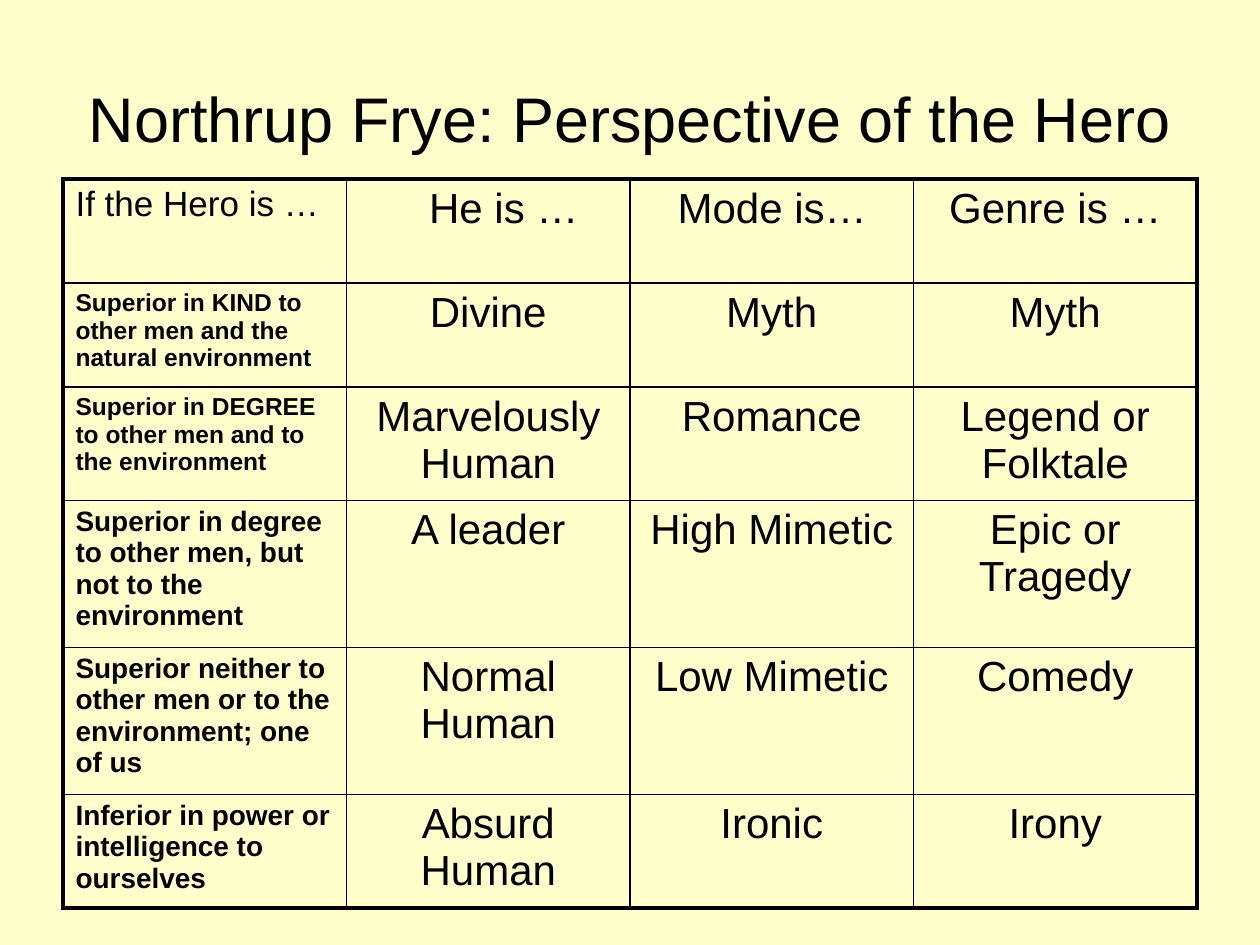
from lxml.etree import SubElement
from pptx import Presentation
from pptx.dml.color import RGBColor
from pptx.enum.text import MSO_ANCHOR, PP_ALIGN
from pptx.oxml.ns import qn
from pptx.util import Pt

EMU_PER_PX = 914400 / 126
FONT = "Arial"
COLORS = {"background": "FFFFCC", "ink": "000000"}
OUTER_PT, INNER_PT = 2.25, 1
ROW_HEIGHT, COLUMN_WIDTH = 104, 1134 // 4

HEADINGS = [("If the Hero is …", 20, 0), ("He is …", 24, 70),
            ("Mode is…", 24, 35), ("Genre is …", 24, 23)]
HEROES = [
    (14, "Superior in KIND to other men and the natural environment",
     "Divine", "Myth", "Myth"),
    (14, "Superior in DEGREE to other men and to the environment",
     "Marvelously Human", "Romance", "Legend or Folktale"),
    (16, "Superior in degree to other men, but not to the environment",
     "A leader", "High Mimetic", "Epic or Tragedy"),
    (16, "Superior neither to other men or to the environment; one of us",
     "Normal Human", "Low Mimetic", "Comedy"),
    (16, "Inferior in power or intelligence to ourselves",
     "Absurd Human", "Ironic", "Irony"),
]


def px(length):
    return round(length * EMU_PER_PX)


def color(name):
    return RGBColor.from_string(COLORS[name])


def write(frame, text, size, align=PP_ALIGN.LEFT, bold=False, indent=0):
    paragraph = frame.paragraphs[0]
    paragraph.alignment = align
    if indent:
        paragraph._p.get_or_add_pPr().set("marL", str(px(indent)))
    run = paragraph.add_run()
    run.text = text
    run.font.name = FONT
    run.font.size = Pt(size)
    run.font.bold = bold
    run.font.color.rgb = color("ink")


def add_title(slide, text):
    title = slide.shapes.add_textbox(px(63), px(38), px(1134), px(158))
    frame = title.text_frame
    frame.word_wrap = True
    frame.vertical_anchor = MSO_ANCHOR.MIDDLE
    write(frame, text, 36, PP_ALIGN.CENTER)


def set_borders(cell, outer_sides):
    properties = cell._tc.get_or_add_tcPr()
    for side in "LRTB":
        width = OUTER_PT if side in outer_sides else INNER_PT
        line = SubElement(properties, qn(f"a:ln{side}"), w=str(Pt(width)))
        fill = SubElement(line, qn("a:solidFill"))
        SubElement(fill, qn("a:srgbClr"), val=COLORS["ink"])


def add_hero_table(slide):
    row_count, column_count = len(HEROES) + 1, len(HEADINGS)
    table = slide.shapes.add_table(
        row_count, column_count, px(63), px(179),
        px(COLUMN_WIDTH * column_count), px(ROW_HEIGHT * row_count)).table
    table.first_row = False
    table.horz_banding = False
    for column in table.columns:
        column.width = px(1134 / column_count)
    for row in table.rows:
        row.height = px(ROW_HEIGHT)

    for c, (heading, size, indent) in enumerate(HEADINGS):
        write(table.cell(0, c).text_frame, heading, size, indent=indent)
    for r, (size, condition, *traits) in enumerate(HEROES, 1):
        write(table.cell(r, 0).text_frame, condition, size, bold=True)
        for c, trait in enumerate(traits, 1):
            write(table.cell(r, c).text_frame, trait, 24, PP_ALIGN.CENTER)

    for r in range(row_count):
        for c in range(column_count):
            edges = {"L": c == 0, "R": c == column_count - 1,
                     "T": r == 0, "B": r == row_count - 1}
            cell = table.cell(r, c)
            set_borders(cell, [side for side, outer in edges.items() if outer])
            cell.fill.background()


def main():
    presentation = Presentation()
    presentation.slide_width = px(1260)
    presentation.slide_height = px(945)
    slide = presentation.slides.add_slide(presentation.slide_layouts[6])
    slide.background.fill.solid()
    slide.background.fill.fore_color.rgb = color("background")
    add_title(slide, "Northrup Frye: Perspective of the Hero")
    add_hero_table(slide)
    presentation.save("out.pptx")


if __name__ == "__main__":
    main()
